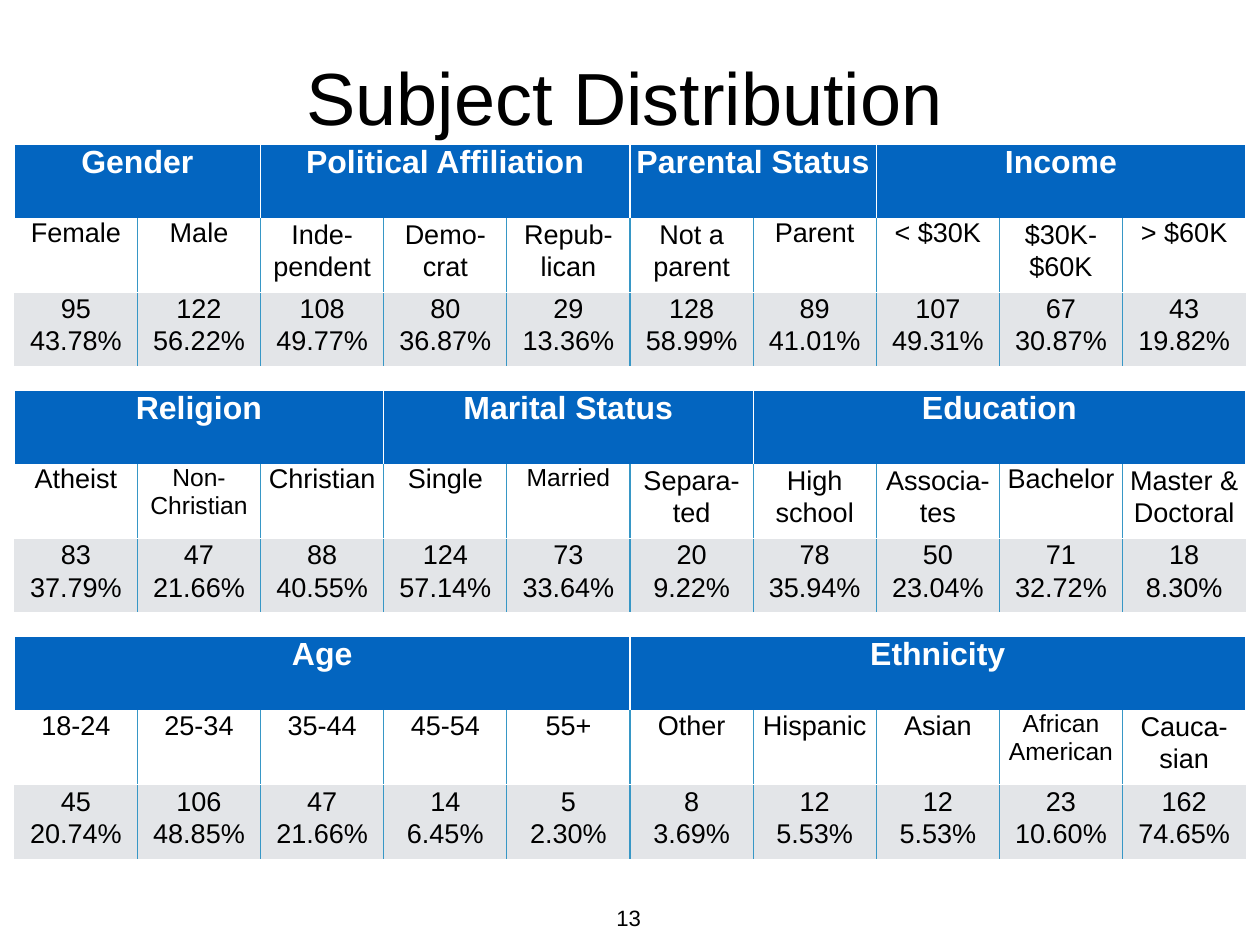
"""Build the slide that shows how the subjects are distributed."""
from lxml.etree import SubElement
from pptx import Presentation
from pptx.dml.color import RGBColor
from pptx.enum.text import MSO_ANCHOR, PP_ALIGN
from pptx.oxml import parse_xml
from pptx.oxml.ns import nsdecls, qn
from pptx.util import Cm, Pt

COLORS = {"header": "0365C0", "counts": "E3E5E8", "rule": "3797C6", "white": "FFFFFF", "black": "000000"}
NO_STYLE_NO_GRID = "{2D5ABB26-0587-4C30-8999-92F81FD0307C}"
COLUMNS = 10
COLUMN_WIDTH, ROW_HEIGHT = Cm(3.53), Cm(2.12)
LEFT, FIRST_TOP, TABLE_PITCH = Cm(0.41), Cm(4.14), Cm(7.06)
SMALL_LABELS = {"Non- Christian", "Married", "African American"}
TWO_LINE_LENGTH = 10
FRAME = {"margin_left": 0, "margin_right": 0, "margin_top": 0, "margin_bottom": 0,
         "vertical_anchor": MSO_ANCHOR.TOP}
HEADER_FONT = {"size": Pt(26), "bold": True}
COUNT_FONT = {"size": Pt(22), "bold": False}

DISTRIBUTIONS = [
    [
        ("Gender", [("Female", "95", "43.78%"), ("Male", "122", "56.22%")]),
        ("Political Affiliation", [("Inde- pendent", "108", "49.77%"), ("Demo- crat", "80", "36.87%"),
                                   ("Repub- lican", "29", "13.36%")]),
        ("Parental Status", [("Not a parent", "128", "58.99%"), ("Parent", "89", "41.01%")]),
        ("Income", [("< $30K", "107", "49.31%"), ("$30K-\n$60K", "67", "30.87%"),
                    ("> $60K", "43", "19.82%")]),
    ],
    [
        ("Religion", [("Atheist", "83", "37.79%"), ("Non- Christian", "47", "21.66%"),
                      ("Christian", "88", "40.55%")]),
        ("Marital Status", [("Single", "124", "57.14%"), ("Married", "73", "33.64%"),
                            ("Separa- ted", "20", "9.22%")]),
        ("Education", [("High school", "78", "35.94%"), ("Associa- tes", "50", "23.04%"),
                       ("Bachelor", "71", "32.72%"), ("Master & Doctoral", "18", "8.30%")]),
    ],
    [
        ("Age", [("18-24", "45", "20.74%"), ("25-34", "106", "48.85%"), ("35-44", "47", "21.66%"),
                 ("45-54", "14", "6.45%"), ("55+", "5", "2.30%")]),
        ("Ethnicity", [("Other", "8", "3.69%"), ("Hispanic", "12", "5.53%"), ("Asian", "12", "5.53%"),
                       ("African American", "23", "10.60%"), ("Cauca- sian", "162", "74.65%")]),
    ],
]


def apply_format(target, values):
    """Set every attribute named in values."""
    for attribute, value in values.items():
        setattr(target, attribute, value)


def write_lines(frame, text, font, color="black", align=PP_ALIGN.CENTER, spacing=None):
    """Fill a text frame with one paragraph per line of text."""
    frame.text = text
    for paragraph in frame.paragraphs:
        apply_format(paragraph, {"alignment": align, "line_spacing": spacing})
        apply_format(paragraph.font, {"name": "Arial", **font})
        paragraph.font.color.rgb = RGBColor.from_string(COLORS[color])


def format_cell(cell, fill, borders):
    """Set margins, fill and the given border sides of a cell."""
    apply_format(cell, FRAME)
    if fill:
        cell.fill.solid()
        cell.fill.fore_color.rgb = RGBColor.from_string(COLORS[fill])
    else:
        cell.fill.background()
    properties = cell._tc.get_or_add_tcPr()
    for position, (side, color) in enumerate(borders.items()):
        line = parse_xml(f'<a:ln{side} {nsdecls("a")} w="12700"/>')
        solid = SubElement(line, qn("a:solidFill"))
        SubElement(solid, qn("a:srgbClr"), val=COLORS[color])
        properties.insert(position, line)


def inner_rules(column):
    """Return the coloured side borders that lie inside the table."""
    sides = {}
    if column > 0:
        sides["L"] = "rule"
    if column < COLUMNS - 1:
        sides["R"] = "rule"
    return sides


def add_category(table, column, label, count, percent):
    """Write a category's label and, below it, its count and share."""
    label_cell, count_cell = table.cell(1, column), table.cell(2, column)
    format_cell(label_cell, None, {**inner_rules(column), "T": "white"})
    format_cell(count_cell, "counts", inner_rules(column))
    small = label in SMALL_LABELS
    spacing = Pt(26) if len(label) >= TWO_LINE_LENGTH and not small else None
    label_font = {"size": Pt(20 if small else 22), "bold": False}
    write_lines(label_cell.text_frame, label, label_font, spacing=spacing)
    write_lines(count_cell.text_frame, f"{count}\n{percent}", COUNT_FONT, spacing=Pt(26.2))


def add_distribution(slide, top, groups):
    """Add a table of groups, each with a header over its categories."""
    table = slide.shapes.add_table(3, COLUMNS, LEFT, top, COLUMN_WIDTH * COLUMNS, ROW_HEIGHT * 3).table
    apply_format(table, {"first_row": False, "horz_banding": False})
    table._tbl.tblPr.find(qn("a:tableStyleId")).text = NO_STYLE_NO_GRID
    for table_column in table.columns:
        table_column.width = COLUMN_WIDTH
    start = 0
    for heading, categories in groups:
        end = start + len(categories)
        for column, category in enumerate(categories, start):
            format_cell(table.cell(0, column), "header", dict.fromkeys("LRTB", "white"))
            add_category(table, column, *category)
        header = table.cell(0, start)
        header.merge(table.cell(0, end - 1))
        write_lines(header.text_frame, heading, HEADER_FONT, "white")
        start = end


def add_title(slide, text):
    """Place and format the slide's title."""
    title = slide.shapes.title
    apply_format(title, {"left": Cm(8.79), "top": Cm(1.22), "width": Cm(18.57), "height": Cm(2.18)})
    apply_format(title.text_frame, {**FRAME, "margin_top": Cm(0.25), "word_wrap": False})
    write_lines(title.text_frame, text, {"size": Pt(60)}, align=PP_ALIGN.LEFT)


def add_page_number(slide, number):
    """Add the page number at the foot of the slide."""
    page = slide.shapes.add_textbox(Cm(17.6), Cm(25.93), Cm(0.84), Cm(0.71))
    apply_format(page.text_frame, {**FRAME, "word_wrap": True})
    write_lines(page.text_frame, number, {"size": Pt(18)})


def main():
    """Build and save the slide."""
    presentation = Presentation()
    apply_format(presentation, {"slide_width": Cm(36.12), "slide_height": Cm(27.1)})
    slide = presentation.slides.add_slide(presentation.slide_layouts[5])
    add_title(slide, "Subject Distribution")
    for index, groups in enumerate(DISTRIBUTIONS):
        add_distribution(slide, FIRST_TOP + index * TABLE_PITCH, groups)
    add_page_number(slide, "13")
    presentation.save("out.pptx")


if __name__ == "__main__":
    main()
